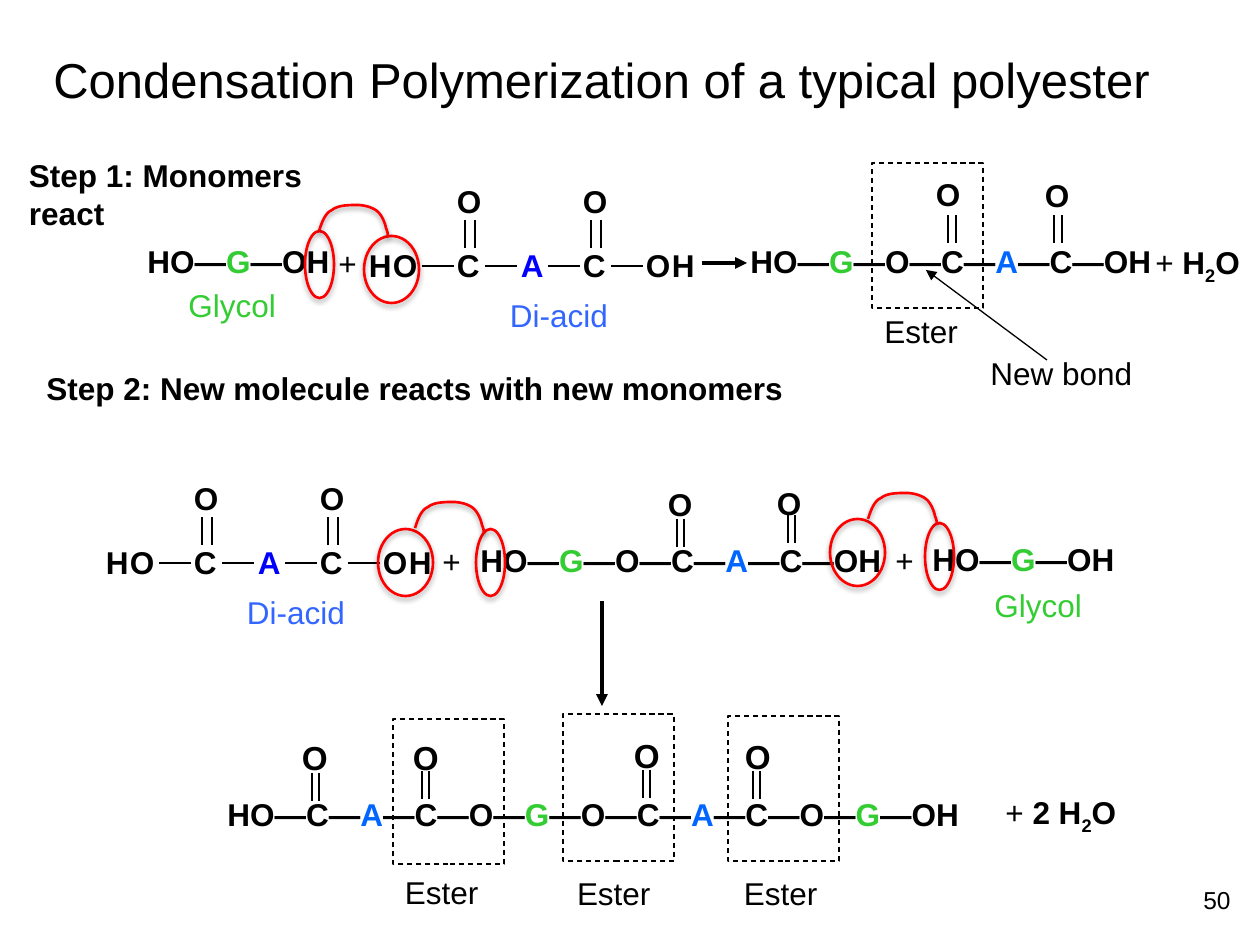
from itertools import groupby

from lxml.etree import SubElement
from pptx import Presentation
from pptx.dml.color import RGBColor
from pptx.enum.dml import MSO_LINE
from pptx.enum.shapes import MSO_CONNECTOR, MSO_SHAPE
from pptx.enum.text import MSO_AUTO_SIZE, PP_ALIGN
from pptx.oxml.ns import qn
from pptx.util import Inches, Pt

PX = Inches(1) / 126
BLACK, RED = "000000", "FF0000"
GREEN, BLUE, ACID_BLUE, LABEL_BLUE = "33CC33", "0066FF", "0000FF", "3366FF"
UNIT_COLORS = {"G": GREEN, "A": BLUE}
ESTER_UNIT = "HO―G―O―C―A―C―OH"

# Bezier segments of a linking arc, relative to its start
ARC = [
    [(3, -9), (6, -18), (13, -21)],
    [(19, -26), (30, -26), (38, -26)],
    [(45, -26), (53, -24), (58, -20)],
    [(63, -16), (66, -8), (67, -3)],
    [(69, 1), (69, 6), (69, 6)],
]


def px(value):
    return round(value * PX)


def color(hex_string):
    return RGBColor.from_string(hex_string)


def style_run(run, size, hex_string, bold):
    run.font.name = "Arial"
    run.font.size = Pt(size)
    run.font.bold = bold
    run.font.color.rgb = color(hex_string)


def add_text(slide, text, left, top, width, height=50, size=18, hex_string=BLACK,
             bold=False, inset=True, wrap=False, align=PP_ALIGN.LEFT):
    shape = slide.shapes.add_textbox(px(left), px(top), px(width), px(height))
    frame = shape.text_frame
    frame.word_wrap = wrap
    frame.auto_size = MSO_AUTO_SIZE.SHAPE_TO_FIT_TEXT
    if not inset:
        frame.margin_left = frame.margin_right = 0
        frame.margin_top = frame.margin_bottom = 0
    frame.text = text
    paragraph = frame.paragraphs[0]
    paragraph.alignment = align
    for run in paragraph.runs:
        style_run(run, size, hex_string, bold)
    return paragraph


def add_plain(slide, text, left, top, width, **options):
    add_text(slide, text, left, top, width, height=38, inset=False, **options)


def add_chain(slide, text, left, top, width):
    paragraph = add_text(slide, "", left, top, width)
    for hex_string, letters in groupby(text, lambda letter: UNIT_COLORS.get(letter, BLACK)):
        run = paragraph.add_run()
        run.text = "".join(letters)
        style_run(run, 18, hex_string, True)


def add_water(slide, formula, left, top, width):
    paragraph = add_text(slide, "+ ", left, top, width)
    for text in (formula, "2", "O"):
        run = paragraph.add_run()
        run.text = text
        style_run(run, 18, BLACK, True)
        if text == "2":
            run.font._element.set("baseline", "-25000")


def add_line(slide, start, end, width=1.13, arrow=False):
    line = slide.shapes.add_connector(
        MSO_CONNECTOR.STRAIGHT, *(px(value) for value in (*start, *end)))
    line.line.width = Pt(width)
    line.line.color.rgb = color(BLACK)
    if arrow:
        SubElement(line.line._get_or_add_ln(), qn("a:tailEnd"), type="triangle")
    SubElement(line._element.spPr, qn("a:effectLst"))


def add_carbonyl(slide, left, top, bond_left, bond_top, gap=7, size=18):
    """Oxygen with the double bond below it."""
    add_plain(slide, "O", left, top, 25, size=size, bold=True)
    for x in (bond_left, bond_left + gap):
        add_line(slide, (x, bond_top), (x, bond_top + 28))


def add_diacid(slide, left, top):
    for letter, offset in (("H", 0), ("O", 24), ("C", 88), ("A", 152),
                           ("C", 214), ("O", 277), ("H", 303)):
        add_plain(slide, letter, left + offset, top, 23, bold=True,
                  hex_string=ACID_BLUE if letter == "A" else BLACK)
    for index in range(4):
        x = left + 53 + 63 * index
        add_line(slide, (x, top + 20), (x + 32, top + 20))
    for x in (left + 88, left + 214):
        add_carbonyl(slide, x, top - 64, x + 8, top - 26, gap=10)
    add_plain(slide, "Di-acid", left + 141, top + 50, 100, hex_string=LABEL_BLUE)


def add_glycol(slide, left, top, label_left, label_top):
    add_chain(slide, "HO―G―OH", left, top, 208)
    add_text(slide, "Glycol", label_left, label_top, 115, hex_string=GREEN)


def add_ester_frame(slide, left, top, height=145):
    shape = slide.shapes.add_shape(
        MSO_SHAPE.RECTANGLE, px(left), px(top), px(111), px(height))
    shape.shadow.inherit = False
    shape.fill.background()
    shape.line.color.rgb = color(BLACK)
    shape.line.width = Pt(0.75)
    shape.line.dash_style = MSO_LINE.DASH


def style_marker(shape, alpha, distance):
    """Red outline with a soft shadow straight below."""
    shape.fill.background()
    shape.line.color.rgb = color(RED)
    shape.line.width = Pt(1.5)
    shape.shadow.inherit = False
    effects = shape._element.spPr.find(qn("a:effectLst"))
    shadow = SubElement(effects, qn("a:outerShdw"), blurRad=str(Pt(3.1)),
                        dist=str(Pt(distance)), dir="5400000", rotWithShape="0")
    shade = SubElement(shadow, qn("a:srgbClr"), val=BLACK)
    SubElement(shade, qn("a:alpha"), val=str(alpha * 1000))


def add_ring(slide, left, top, width):
    shape = slide.shapes.add_shape(MSO_SHAPE.OVAL, px(left), px(top), px(width), px(67))
    style_marker(shape, 35, 1.8)


def add_arc(slide, left, top, steps=8):
    points, start = [], (0, 0)
    for first, second, end in ARC:
        for step in range(1, steps + 1):
            t = step / steps
            u = 1 - t
            x, y = (u**3 * a + 3 * u * u * t * b + 3 * u * t * t * c + t**3 * d
                    for a, b, c, d in zip(start, first, second, end))
            points.append((px(left + x), px(top + y)))
        start = end
    builder = slide.shapes.build_freeform(px(left), px(top))
    builder.add_line_segments(points, close=False)
    style_marker(builder.convert_to_shape(), 38, 1.6)


def add_step_one(slide):
    add_plain(slide, "Step 1: Monomers react", 29, 156, 340, bold=True, wrap=True)
    add_glycol(slide, 135, 236, 176, 280)
    add_text(slide, "+", 326, 238, 44)
    add_diacid(slide, 369, 246)
    add_line(slide, (702, 263), (747, 263), width=2.25, arrow=True)
    # First product
    add_chain(slide, ESTER_UNIT, 738, 236, 426)
    add_carbonyl(slide, 936, 175, 948, 215, gap=8)
    add_carbonyl(slide, 1045, 176, 1054, 215, gap=8)
    add_ester_frame(slide, 872, 163)
    add_text(slide, "Ester", 872, 306, 106)
    add_line(slide, (1047, 360), (926, 270), width=0.75, arrow=True)
    add_text(slide, "New bond", 978, 348, 170)
    add_water(slide, "H", 1143, 237, 111)


def add_step_two(slide):
    add_text(slide, "Step 2: New molecule reacts with new monomers", 34, 363, 764, bold=True)
    add_diacid(slide, 106, 543)
    add_text(slide, "+", 430, 536, 44)
    add_chain(slide, ESTER_UNIT, 468, 535, 426)
    add_carbonyl(slide, 668, 485, 677, 519)
    add_carbonyl(slide, 777, 484, 788, 515)
    add_text(slide, "+", 883, 535, 44)
    add_glycol(slide, 920, 534, 982, 580)
    add_line(slide, (602, 601), (602, 706), width=2.25, arrow=True)


def add_final_product(slide):
    add_chain(slide, "HO―C―A―C―O―G―O―C―A―C―O―G―OH", 215, 789, 757)
    for left, top, bond_left, bond_top in ((302, 737, 312, 773), (413, 737, 422, 771),
                                           (634, 735, 643, 770), (745, 736, 753, 771)):
        add_carbonyl(slide, left, top, bond_left, bond_top, size=19)
    for left, top, height, label_left, label_top in (
            (393, 719, 145, 405, 873), (563, 714, 147, 577, 874), (728, 716, 145, 744, 874)):
        add_ester_frame(slide, left, top, height)
        add_plain(slide, "Ester", label_left, label_top, 80)
    add_water(slide, "2 H", 993, 787, 137)


def main():
    presentation = Presentation()
    presentation.slide_width = Inches(10)
    presentation.slide_height = Inches(7.5)
    slide = presentation.slides.add_slide(presentation.slide_layouts[6])
    add_text(slide, "Condensation Polymerization of a typical polyester",
             41, 43, 1134, height=72, size=28)
    add_step_one(slide)
    add_step_two(slide)
    add_final_product(slide)
    add_text(slide, "50", 1166, 879, 77, height=45, size=14, wrap=True, align=PP_ALIGN.RIGHT)
    # Groups that split off as water
    for left, top, width in ((305, 231, 29), (364, 236, 55), (925, 523, 29),
                             (830, 519, 55), (378, 529, 55), (476, 529, 29)):
        add_ring(slide, left, top, width)
    for left, top in ((319, 231), (868, 519), (415, 528)):
        add_arc(slide, left, top)
    presentation.save("out.pptx")


if __name__ == "__main__":
    main()
